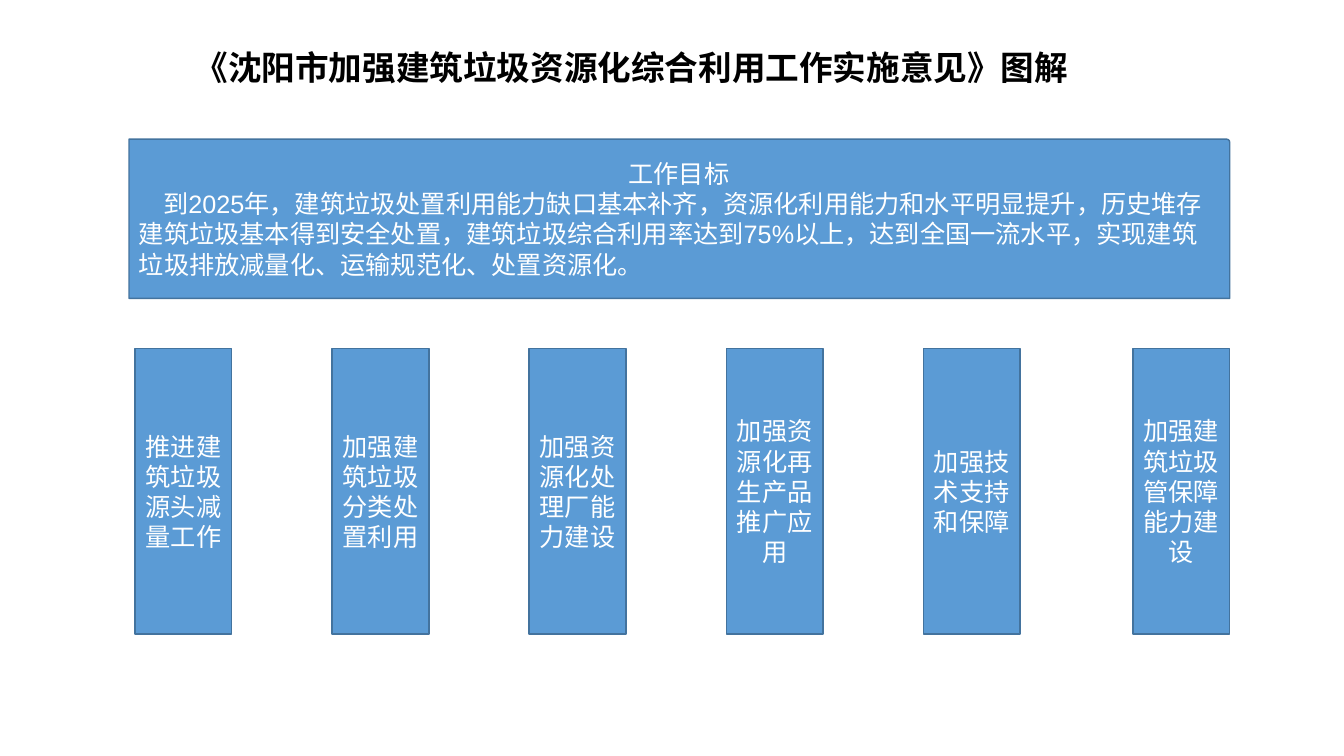
"""Builds a one-slide diagram of a work goal and its six measures."""
from pptx import Presentation
from pptx.dml.color import RGBColor
from pptx.enum.shapes import MSO_SHAPE as SHAPE
from pptx.enum.text import MSO_ANCHOR as ANCHOR, PP_ALIGN as ALIGN
from pptx.util import Inches, Pt

COLORS = {"fill": "5B9BD5", "line": "43739E", "light": "FFFFFF", "dark": "000000"}
TITLE = "《沈阳市加强建筑垃圾资源化综合利用工作实施意见》图解"
GOAL_HEAD = "工作目标"
GOAL_TEXT = (
    "到2025年，建筑垃圾处置利用能力缺口基本补齐，资源化利用能力和水平明显提升，"
    "历史堆存建筑垃圾基本得到安全处置，建筑垃圾综合利用率达到75%以上，"
    "达到全国一流水平，实现建筑垃圾排放减量化、运输规范化、处置资源化。"
)
MEASURES = [
    "推进建筑垃圾源头减量工作",
    "加强建筑垃圾分类处置利用",
    "加强资源化处理厂能力建设",
    "加强资源化再生产品推广应用",
    "加强技术支持和保障",
    "加强建筑垃圾管保障能力建设",
]


def color(name):
    return RGBColor.from_string(COLORS[name])


class Deck:
    """Holds the style and current slide on a grid of 160 columns by 90 rows."""

    def __init__(self):
        self.prs = Presentation()
        self.cell = Inches(1 / 12)
        self.prs.slide_width = 160 * self.cell
        self.prs.slide_height = 90 * self.cell
        self.s = self.prs.slides.add_slide(self.prs.slide_layouts[5])

    def grid(self, *units):
        return [round(u * self.cell) for u in units]

    def style(self, p, size, name, ink, align, bold=False):
        p.alignment = align
        p.font.size, p.font.name, p.font.bold = Pt(size), name, bold
        p.font.color.rgb = color(ink)

    def title(self, text, box, inset):
        sp = self.s.shapes.title
        sp.left, sp.top, sp.width, sp.height = self.grid(*box)
        tf = sp.text_frame
        tf.text, tf.vertical_anchor = text, ANCHOR.MIDDLE
        tf.margin_left = Inches(inset)
        p = tf.paragraphs[0]
        p.line_spacing = 0.9
        self.style(p, 24, "Montserrat", "dark", ALIGN.LEFT, True)

    def panel(self, kind, box, corners, text):
        sp = self.s.shapes.add_shape(kind, *self.grid(*box))
        for i, corner in enumerate(corners):
            sp.adjustments[i] = corner
        sp.shadow.inherit = False
        sp.fill.solid()
        sp.fill.fore_color.rgb = color("fill")
        sp.line.color.rgb = color("line")
        sp.line.width = Pt(1)
        tf = sp.text_frame
        tf.word_wrap, tf.vertical_anchor = True, ANCHOR.MIDDLE
        tf.text = text
        self.style(tf.paragraphs[0], 18, "Arial", "light", ALIGN.CENTER)
        return tf

    def body(self, tf, text, indent):
        p = tf.add_paragraph()
        p.text = text
        p._p.get_or_add_pPr().set("indent", str(Inches(indent)))
        self.style(p, 18, "Arial", "light", ALIGN.LEFT)


def main():
    deck = Deck()
    deck.title(TITLE, (9.24, 3.72, 138, 9.12), 1.16)

    left, width = 15.36, 131.04
    goal = deck.panel(SHAPE.ROUND_1_RECTANGLE, (left, 16.56, width, 18.96), [0.02], GOAL_HEAD)
    deck.body(goal, GOAL_TEXT, 0.24)

    first, pitch, column = 16.08, 23.46, 11.52
    lefts = [first + i * pitch for i in range(5)] + [left + width - column]
    for x, measure in zip(lefts, MEASURES):
        deck.panel(SHAPE.ROUND_2_SAME_RECTANGLE, (x, 41.52, column, 33.96), [0, 0], measure)

    deck.prs.save("out.pptx")


if __name__ == "__main__":
    main()
